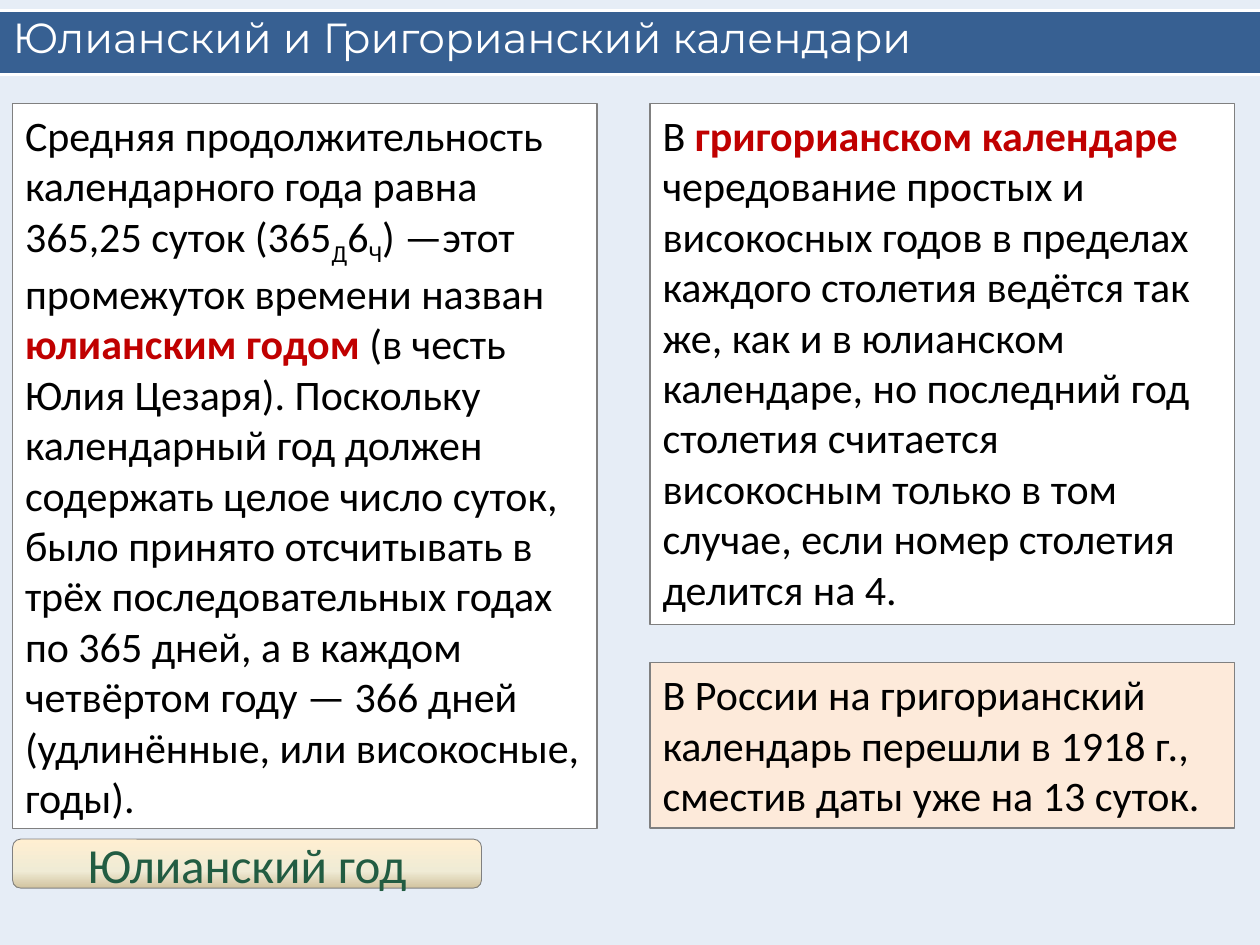
import copy
from dataclasses import dataclass

import pptx
import pptx.dml.color
import pptx.enum.shapes
import pptx.enum.text
import pptx.oxml.ns
import pptx.util
from lxml import etree

Pt = pptx.util.Pt
Shape = pptx.enum.shapes.MSO_SHAPE
Anchor = pptx.enum.text.MSO_ANCHOR
Align = pptx.enum.text.PP_ALIGN
qn = pptx.oxml.ns.qn


@dataclass(frozen=True)
class Theme:
    background: str = "E6EDF6"
    band: str = "376092"
    white: str = "FFFFFF"
    peach: str = "FDEADA"
    border: str = "808080"
    text: str = "000000"
    accent: str = "C00000"
    label: str = "225C42"
    label_stops: tuple = ((0, "FFEFD1"), (0.65, "F0EBD5"), (1, "D1C39F"))
    title_font: str = "Montserrat"
    body_font: str = "Calibri"
    body_size: int = 24
    label_size: int = 28


THEME = Theme()
WIDTH, HEIGHT = 720, 540
BAND_TOP, BAND_HEIGHT = 6, 36.5
LEFT, RIGHT = 7.2, 371.5
CARD_TOP, CARD_WIDTH = 59, 334

PLAIN, STRONG, SUBSCRIPT = "plain", "strong", "subscript"
JULIAN = [
    ("Средняя продолжительность календарного года равна 365,25 суток (365", PLAIN),
    ("Д", SUBSCRIPT),
    ("6", PLAIN),
    ("Ч", SUBSCRIPT),
    (") —этот промежуток времени назван ", PLAIN),
    ("юлианским годом ", STRONG),
    ("(в честь Юлия Цезаря). Поскольку календарный год должен содержать "
     "целое число суток, было принято отсчитывать в трёх последовательных "
     "годах по 365 дней, а в каждом четвёртом году — 366 дней "
     "(удлинённые, или високосные, годы).", PLAIN),
]
GREGORIAN = [
    ("В ", PLAIN),
    ("григорианском календаре ", STRONG),
    ("чередование простых и високосных годов в пределах каждого столетия "
     "ведётся так же, как и в юлианском календаре, но последний год столетия "
     "считается високосным только в том случае, если номер столетия "
     "делится на 4.", PLAIN),
]
RUSSIA = [("В России на григорианский календарь перешли в 1918 г., "
           "сместив даты уже на 13 суток.", PLAIN)]


def rgb(value):
    return pptx.dml.color.RGBColor.from_string(value)


def add_span(para, text, size, color, font=THEME.body_font):
    span = para.add_run()
    span.text = text
    span.font.name = font
    span.font.size = Pt(size)
    span.font.color.rgb = rgb(color)
    return span


def add_box(page, kind, left, top, width, height):
    box = page.shapes.add_shape(kind, Pt(left), Pt(top), Pt(width), Pt(height))
    box.shadow.inherit = False
    box.text_frame.word_wrap = True
    return box


def outline(box, width):
    box.line.color.rgb = rgb(THEME.border)
    box.line.width = Pt(width)


def add_rule(page, top):
    rule = page.shapes.add_connector(
        pptx.enum.shapes.MSO_CONNECTOR.STRAIGHT, 0, Pt(top), Pt(WIDTH), Pt(top))
    rule.line.color.rgb = rgb(THEME.white)
    rule.line.width = Pt(2)
    etree.SubElement(rule.element.spPr, qn("a:effectLst"))


def add_title(page, text):
    band = add_box(page, Shape.RECTANGLE, 0, BAND_TOP, WIDTH, BAND_HEIGHT)
    band.fill.solid()
    band.fill.fore_color.rgb = rgb(THEME.band)
    band.line.fill.background()
    for top in (BAND_TOP + BAND_HEIGHT, BAND_TOP):
        add_rule(page, top)

    title = page.shapes.title
    title.left, title.top, title.width, title.height = 0, Pt(-3), Pt(WIDTH), Pt(48)
    title.element.getparent().append(title.element)
    frame = title.text_frame
    frame.auto_size = pptx.enum.text.MSO_AUTO_SIZE.NONE
    frame.vertical_anchor = Anchor.MIDDLE
    para = frame.paragraphs[0]
    para.alignment = Align.LEFT
    add_span(para, text, THEME.body_size, THEME.white, THEME.title_font)


def add_card(page, left, top, height, fill, spans):
    card = add_box(page, Shape.RECTANGLE, left, top, CARD_WIDTH, height)
    card.fill.solid()
    card.fill.fore_color.rgb = rgb(fill)
    outline(card, 0.75)
    frame = card.text_frame
    frame.auto_size = pptx.enum.text.MSO_AUTO_SIZE.SHAPE_TO_FIT_TEXT
    frame.vertical_anchor = Anchor.TOP
    para = frame.paragraphs[0]
    para.alignment = Align.LEFT
    for text, style in spans:
        color = THEME.accent if style == STRONG else THEME.text
        span = add_span(para, text, THEME.body_size, color)
        span.font.bold = style == STRONG
        if style == SUBSCRIPT:
            span.font._element.set("baseline", "-25000")


def fill_gradient(box, stops):
    box.fill.gradient()
    box.fill.gradient_angle = 270
    stop_list = box.element.spPr.find(qn("a:gradFill")).find(qn("a:gsLst"))
    while len(stop_list) < len(stops):
        stop_list.append(copy.deepcopy(stop_list[-1]))
    for stop, (position, color) in zip(box.fill.gradient_stops, stops):
        stop.position = position
        stop.color.rgb = rgb(color)


def add_label(page, text):
    label = add_box(page, Shape.ROUNDED_RECTANGLE, LEFT, 479.5, 268, 28)
    fill_gradient(label, THEME.label_stops)
    outline(label, 0.5)
    label.text_frame.vertical_anchor = Anchor.MIDDLE
    para = label.text_frame.paragraphs[0]
    para.alignment = Align.CENTER
    add_span(para, text, THEME.label_size, THEME.label)


def main():
    deck = pptx.Presentation()
    deck.slide_width, deck.slide_height = Pt(WIDTH), Pt(HEIGHT)
    page = deck.slides.add_slide(deck.slide_layouts[5])
    page.background.fill.solid()
    page.background.fill.fore_color.rgb = rgb(THEME.background)

    add_title(page, "Юлианский и Григорианский календари")
    add_card(page, LEFT, CARD_TOP, 414.5, THEME.white, JULIAN)
    add_card(page, RIGHT, CARD_TOP, 298, THEME.white, GREGORIAN)
    add_card(page, RIGHT, 378.7, 94.5, THEME.peach, RUSSIA)
    add_label(page, "Юлианский год")
    deck.save("out.pptx")


if __name__ == "__main__":
    main()
